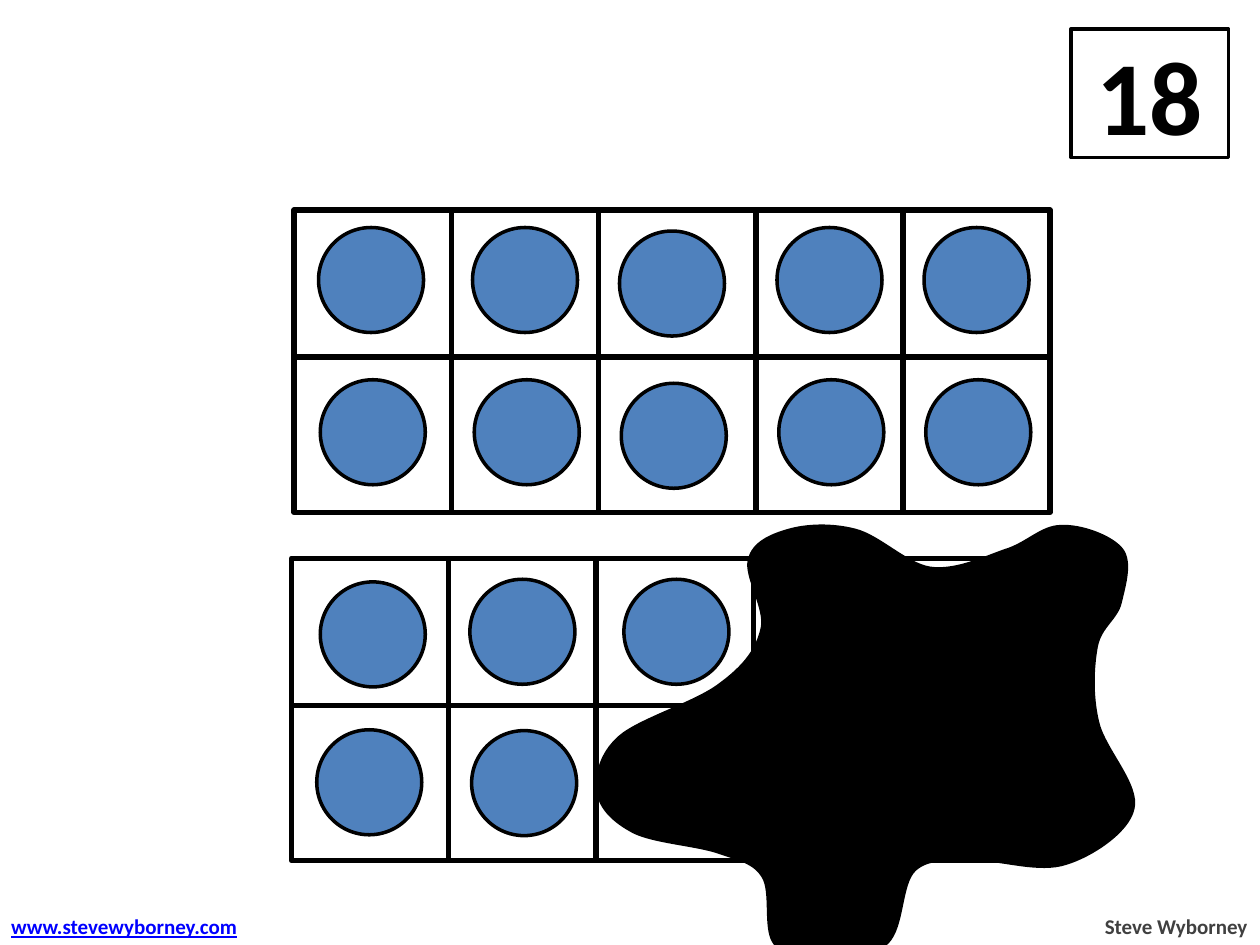
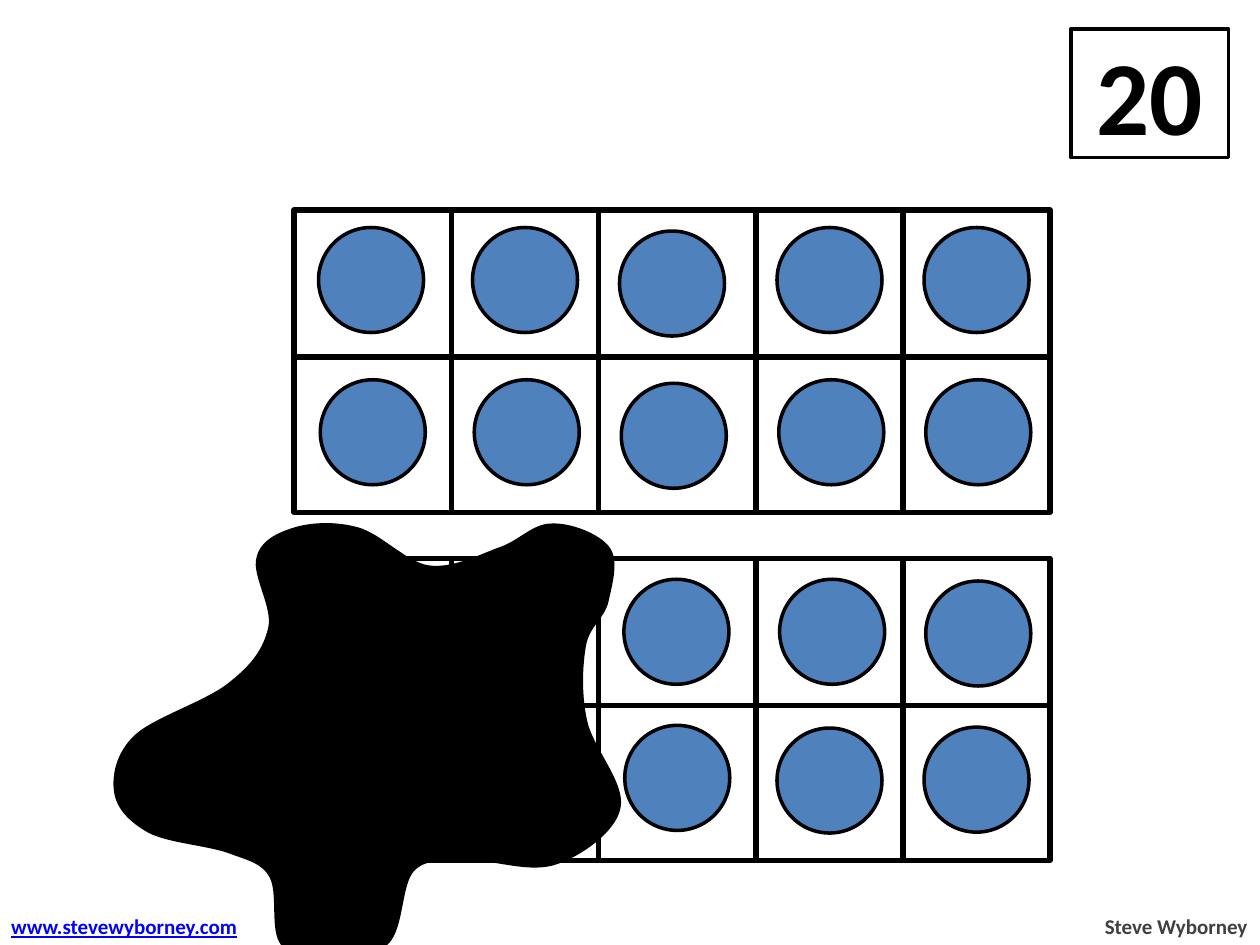
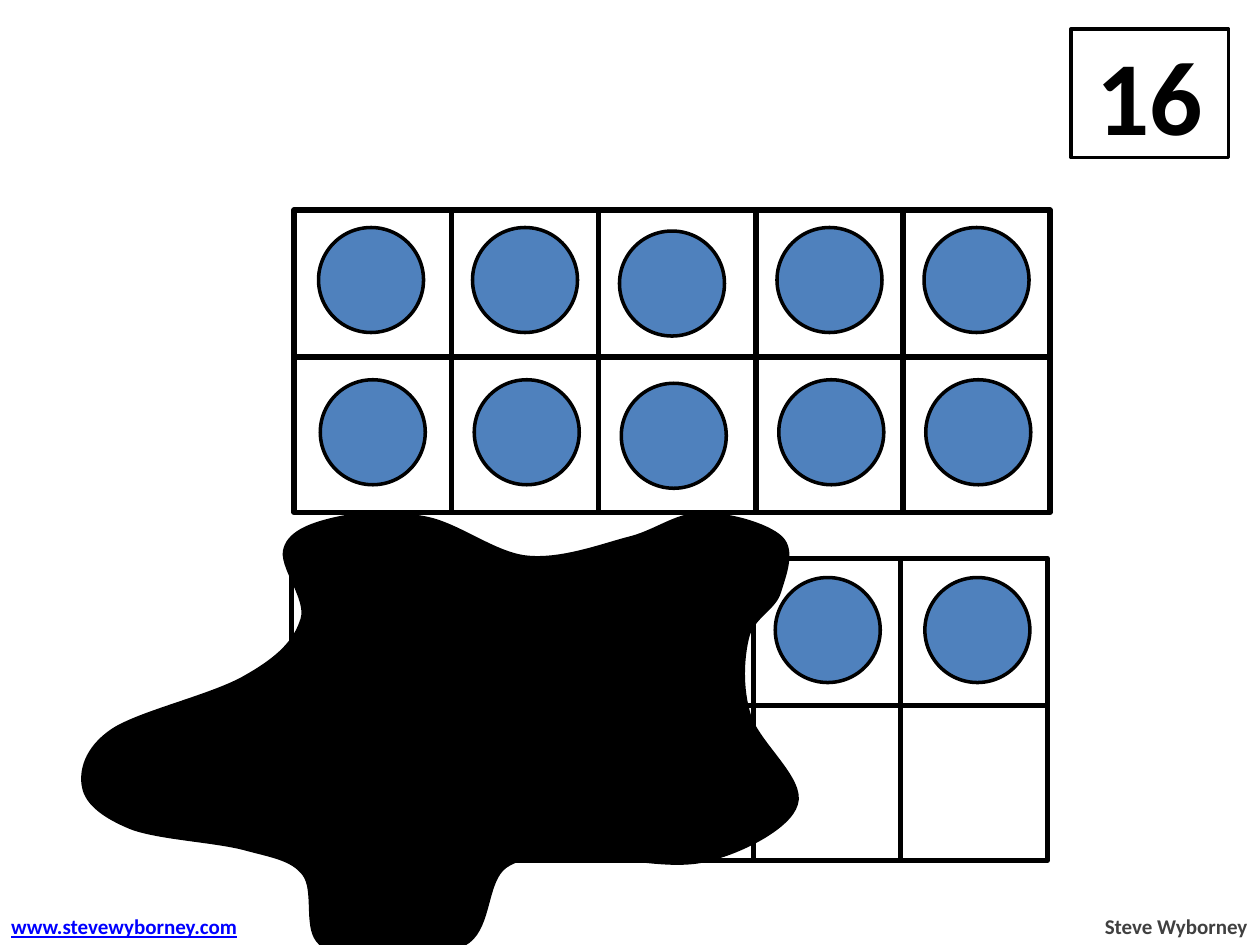
from dataclasses import dataclass

from lxml import etree
from pptx import Presentation
from pptx import util as u
from pptx.dml import color
from pptx.enum import shapes, text
from pptx.oxml import ns

PAGES = [
    {
        "total": "18",
        "frame_left": 166.5,
        "discs": [(183, 332.5), (268.5, 331), (356.5, 331), (181, 417), (269.5, 417.5)],
        "blot": (342, 301, 306, 251.3),
    },
    {
        "total": "20",
        "frame_left": 168,
        "discs": [(356.5, 331), (445.5, 331), (529, 332),
                  (357, 414.5), (444, 416), (528, 415.5)],
        "blot": (66.2, 300.2, 288, 252),
    },
    {
        "total": "16",
        "frame_left": 166.5,
        "discs": [(443, 330), (528.5, 330)],
        "blot": (47.9, 294, 408, 258),
    },
]

FULL_COLUMNS = [(182, 0), (270, 0), (354, 2), (444, 0), (528, 0)]
FULL_ROWS = [(0, 130), (1, 217)]
FULL_FRAME = (168, 120)
LOWER_TOP = 319
FRAME_SIZE = (432, 172.8)
COLUMN_EDGES = [90, 174, 264, 348]
ROW_EDGE = 84
ROW_SHIFT = 1.5
DISC_SIZE = 60
TOTAL_BOX = (612, 16.5, 90, 73.5)

FOOTERS = [
    {"words": "Steve Wyborney", "box": (623.5, 518.4, 96.5, 21.6),
     "align": text.PP_ALIGN.RIGHT, "ink": "credit", "underline": False},
    {"words": "www.stevewyborney.com", "box": (-0.7, 518.4, 144, 21.6),
     "align": text.PP_ALIGN.LEFT, "ink": "address", "underline": True},
]

BLOT_SIZE = (425, 349)
BLOT_START = (28, 242)
BLOT_CURVES = [
    ((13, 234), (2, 224), (0, 211)),
    ((-2, 199), (1, 181), (17, 167)),
    ((33, 153), (78, 140), (97, 125)),
    ((116, 111), (126, 98), (130, 81)),
    ((134, 65), (116, 39), (120, 26)),
    ((123, 13), (137, 7), (151, 3)),
    ((165, -1), (185, -2), (204, 3)),
    ((223, 8), (244, 30), (263, 33)),
    ((283, 36), (306, 25), (323, 19)),
    ((340, 14), (352, 0), (367, 0)),
    ((383, -1), (407, 8), (415, 18)),
    ((423, 28), (417, 47), (414, 60)),
    ((411, 73), (398, 79), (395, 95)),
    ((392, 111), (391, 134), (396, 155)),
    ((401, 177), (429, 205), (424, 224)),
    ((420, 242), (391, 261), (371, 267)),
    ((350, 274), (321, 264), (301, 264)),
    ((281, 265), (263, 261), (251, 272)),
    ((239, 283), (242, 317), (229, 330)),
    ((216, 342), (188, 349), (173, 349)),
    ((158, 349), (146, 340), (139, 329)),
    ((132, 317), (138, 290), (131, 278)),
    ((124, 266), (112, 264), (95, 258)),
    ((77, 252), (44, 250), (28, 242)),
]


@dataclass(frozen=True)
class Theme:
    font: str = "Calibri"
    black: str = "000000"
    white: str = "FFFFFF"
    disc: str = "4F81BD"
    credit: str = "404040"
    address: str = "0000FF"
    total_size: float = 60
    footer_size: float = 12
    thin: float = 2
    thick: float = 3


THEME = Theme()


def rgb(value):
    return color.RGBColor.from_string(value)


def points(values):
    return [u.Pt(value) for value in values]


def apply(target, values):
    for name, value in values.items():
        setattr(target, name, value)


def outline(shape, width):
    shape.line.color.rgb = rgb(THEME.black)
    shape.line.width = u.Pt(width)


def paint(shape, fill, width):
    shape.shadow.inherit = False
    if fill:
        shape.fill.solid()
        shape.fill.fore_color.rgb = rgb(fill)
    else:
        shape.fill.background()
    outline(shape, width)


def write(shape, words, size, ink, align, underline=False):
    para = shape.text_frame.paragraphs[0]
    para.alignment = align
    span = para.add_run()
    span.text = words
    apply(span.font, {"name": THEME.font, "size": u.Pt(size), "bold": True,
                      "underline": underline})
    span.font.color.rgb = rgb(ink)


def add_disc(parent, left, top):
    disc = parent.add_shape(shapes.MSO_SHAPE.OVAL,
                            *points((left, top, DISC_SIZE, DISC_SIZE)))
    paint(disc, THEME.disc, THEME.thin)


def add_divider(parent, *ends):
    divider = parent.add_connector(shapes.MSO_CONNECTOR.STRAIGHT, *points(ends))
    outline(divider, THEME.thick)
    etree.SubElement(divider.element.spPr, ns.qn("a:effectLst"))


def add_frame(page, left, top):
    group = page.shapes.add_group_shape().shapes
    width, height = FRAME_SIZE
    border = group.add_shape(shapes.MSO_SHAPE.RECTANGLE,
                             *points((left, top, width, height)))
    paint(border, None, THEME.thick)
    for edge in COLUMN_EDGES:
        add_divider(group, left + edge, top, left + edge, top + height)
    start = left + ROW_SHIFT
    add_divider(group, start, top + ROW_EDGE, start + width, top + ROW_EDGE)
    return group


def add_full_frame(page):
    group = add_frame(page, *FULL_FRAME)
    for shift, top in FULL_ROWS:
        for left, drop in FULL_COLUMNS:
            add_disc(group, left + shift, top + drop)


def add_footer(page, footer):
    box = page.shapes.add_textbox(*points(footer["box"]))
    apply(box.text_frame, {"word_wrap": False,
                           "auto_size": text.MSO_AUTO_SIZE.SHAPE_TO_FIT_TEXT})
    write(box, footer["words"], THEME.footer_size, getattr(THEME, footer["ink"]),
          footer["align"], footer["underline"])


def add_total(page, total):
    box = page.shapes.add_shape(shapes.MSO_SHAPE.RECTANGLE, *points(TOTAL_BOX))
    paint(box, THEME.white, THEME.thin)
    box.text_frame.vertical_anchor = text.MSO_ANCHOR.MIDDLE
    write(box, total, THEME.total_size, THEME.black, text.PP_ALIGN.CENTER)


def add_blot(page, left, top, width, height):
    def place(spot):
        x, y = spot
        return points((left + x * width / BLOT_SIZE[0], top + y * height / BLOT_SIZE[1]))

    builder = page.shapes.build_freeform(*place(BLOT_START))
    builder.add_line_segments([place(spot) for curve in BLOT_CURVES for spot in curve])
    blot = builder.convert_to_shape()
    segments = list(blot.element.iter(ns.qn("a:lnTo")))
    for first in range(0, len(segments), 3):
        curve = etree.Element(ns.qn("a:cubicBezTo"))
        segments[first].addprevious(curve)
        for segment in segments[first:first + 3]:
            curve.append(segment[0])
            segment.getparent().remove(segment)
    paint(blot, THEME.black, THEME.thin)


def build_page(deck, content):
    page = deck.slides.add_slide(deck.slide_layouts[6])
    for left, top in content["discs"]:
        add_disc(page.shapes, left, top)
    for footer in FOOTERS:
        add_footer(page, footer)
    add_total(page, content["total"])
    add_frame(page, content["frame_left"], LOWER_TOP)
    add_full_frame(page)
    add_blot(page, *content["blot"])


def main():
    deck = Presentation()
    apply(deck, {"slide_width": u.Pt(720), "slide_height": u.Pt(540)})
    for content in PAGES:
        build_page(deck, content)
    deck.save("out.pptx")


if __name__ == "__main__":
    main()
